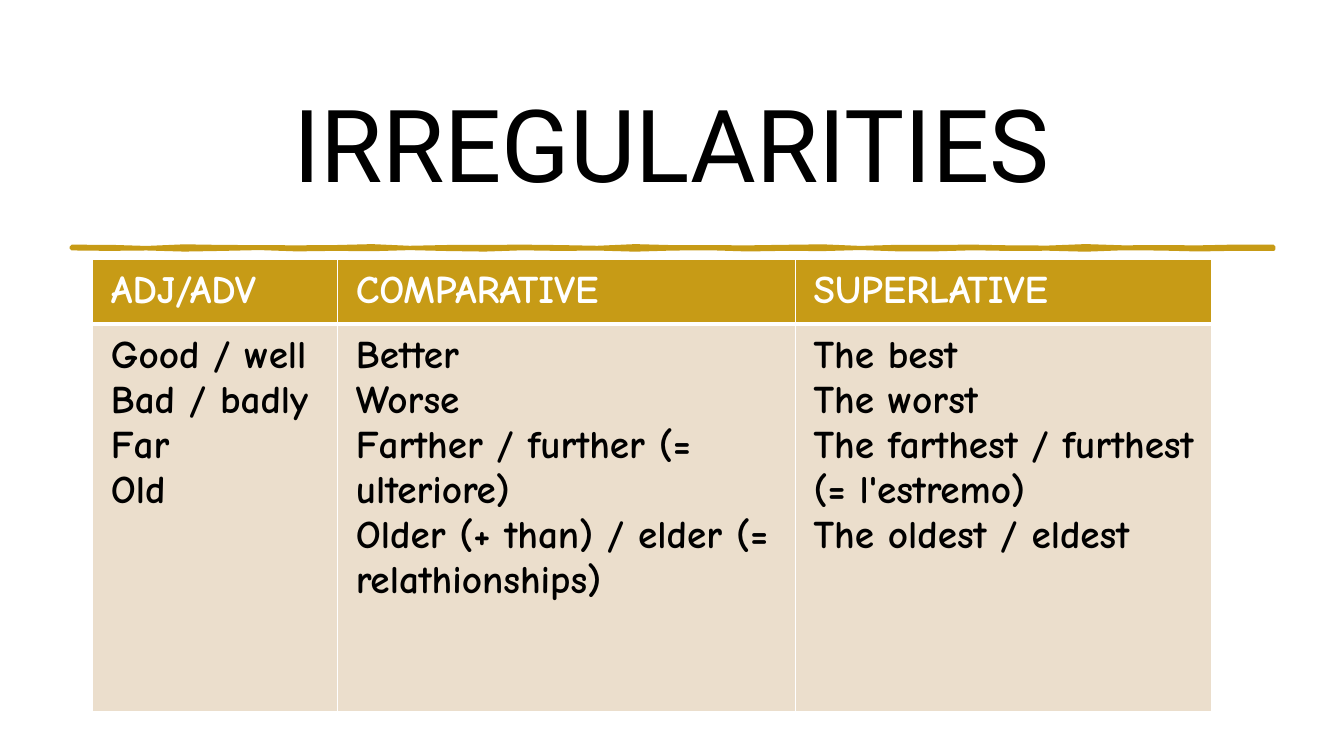
import math
import pptx
import pptx.util
import pptx.dml.color
import pptx.enum.shapes
import pptx.enum.text
import pptx.oxml
import pptx.oxml.ns

Inches = pptx.util.Inches
Pt = pptx.util.Pt
RGB = pptx.dml.color.RGBColor.from_string
ALIGN = pptx.enum.text.PP_ALIGN
ANCHOR = pptx.enum.text.MSO_ANCHOR

# Content
TITLE = "IRREGULARITIES"
HEADS = ["ADJ/ADV", "COMPARATIVE", "SUPERLATIVE"]
WORDS = [
    ["Good / well", "Bad / badly", "Far", "Old"],
    ["Better", "Worse", "Farther / further (= ulteriore)",
     "Older (+ than) / elder (= relathionships)"],
    ["The best", "The worst", "The farthest / furthest (= l'estremo)",
     "The oldest / eldest"],
]

THEME = {
    "gold": "C79B16", "sand": "EBDECC", "white": "FFFFFF", "black": "000000",
    "head": "Roboto", "body": "Comic Neue", "big": 72, "mid": 28,
}

# Layout in inches
PAGE = (13.33, 7.5)
TITLE_BOX = (0.69, 0.69, 11.94, 1.44)
RULE = {"left": 0.71, "right": 12.63, "top": 2.45, "low": 2.47,
        "wave": 0.01, "steps": 32}
GRID = {"left": 0.92, "top": 2.57, "cols": [2.43, 4.54, 4.13], "rows": [0.6, 3.84]}
INSET = (0.18, 0.09)


def write(frame, lines, font, size, color, bold=False, align=ALIGN.LEFT):
    """Fill a text frame with one paragraph per line."""
    frame.word_wrap = True
    for i, line in enumerate(lines):
        para = frame.add_paragraph() if i else frame.paragraphs[0]
        para.alignment = align
        run = para.add_run()
        run.text = line
        run.font.name = font
        run.font.size = Pt(size)
        run.font.bold = bold
        run.font.color.rgb = RGB(color)


def paint(part, color):
    """Give a shape, or a cell, a plain fill."""
    part.fill.solid()
    part.fill.fore_color.rgb = RGB(color)


def border(cell, top, low):
    """Draw white cell borders; top and low are widths in points."""
    props = cell._tc.get_or_add_tcPr()
    sides = [("lnL", 1), ("lnR", 1), ("lnT", top), ("lnB", low)]
    for i, (side, width) in enumerate(sides):
        props.insert(i, pptx.oxml.parse_xml(
            f'<a:{side} {pptx.oxml.ns.nsdecls("a")} w="{Pt(width)}"><a:solidFill>'
            f'<a:srgbClr val="{THEME["white"]}"/></a:solidFill></a:{side}>'))


def edge(base, phase):
    """Points of one wavy edge, from left to right."""
    span = RULE["right"] - RULE["left"]
    points = []
    for i in range(RULE["steps"] + 1):
        x = RULE["left"] + span * i / RULE["steps"]
        swing = math.sin(4.3 * x + phase) + math.sin(7.1 * x + 2 * phase)
        points.append((Inches(x), Inches(base + RULE["wave"] * swing / 2)))
    return points


def add_back(slide):
    kind = pptx.enum.shapes.MSO_SHAPE.RECTANGLE
    back = slide.shapes.add_shape(kind, 0, 0, *map(Inches, PAGE))
    back.shadow.inherit = False
    back.line.fill.background()
    paint(back, THEME["white"])


def add_title(slide):
    box = slide.shapes.add_textbox(*map(Inches, TITLE_BOX))
    box.text_frame.vertical_anchor = ANCHOR.MIDDLE
    write(box.text_frame, [TITLE], THEME["head"], THEME["big"], THEME["black"],
          align=ALIGN.CENTER)


def add_rule(slide):
    points = edge(RULE["low"], 0) + edge(RULE["top"], 2)[::-1]
    form = slide.shapes.build_freeform(*points[0])
    form.add_line_segments(points[1:], close=True)
    rule = form.convert_to_shape()
    rule.shadow.inherit = False
    paint(rule, THEME["gold"])
    rule.line.color.rgb = RGB(THEME["gold"])
    rule.line.width = Pt(2.75)


def add_grid(slide):
    cols, rows = GRID["cols"], GRID["rows"]
    place = (GRID["left"], GRID["top"], sum(cols), sum(rows))
    table = slide.shapes.add_table(len(rows), len(cols), *map(Inches, place)).table
    table.horz_banding = False
    for r, height in enumerate(rows):
        table.rows[r].height = Inches(height)
    for c, width in enumerate(cols):
        table.columns[c].width = Inches(width)
        # Text, fill, ink, top and bottom border of each row
        looks = [([HEADS[c]], "gold", "white", 1, 3),
                 (WORDS[c], "sand", "black", 3, 1)]
        for r, (lines, fill, ink, top, low) in enumerate(looks):
            cell = table.cell(r, c)
            cell.margin_left = cell.margin_right = Inches(INSET[0])
            cell.margin_top = cell.margin_bottom = Inches(INSET[1])
            paint(cell, THEME[fill])
            border(cell, top, low)
            write(cell.text_frame, lines, THEME["body"], THEME["mid"], THEME[ink],
                  bold=True)


def main():
    deck = pptx.Presentation()
    deck.slide_width, deck.slide_height = map(Inches, PAGE)
    slide = deck.slides.add_slide(deck.slide_layouts[6])
    add_back(slide)
    add_title(slide)
    add_rule(slide)
    add_grid(slide)
    deck.save("out.pptx")


if __name__ == "__main__":
    main()
